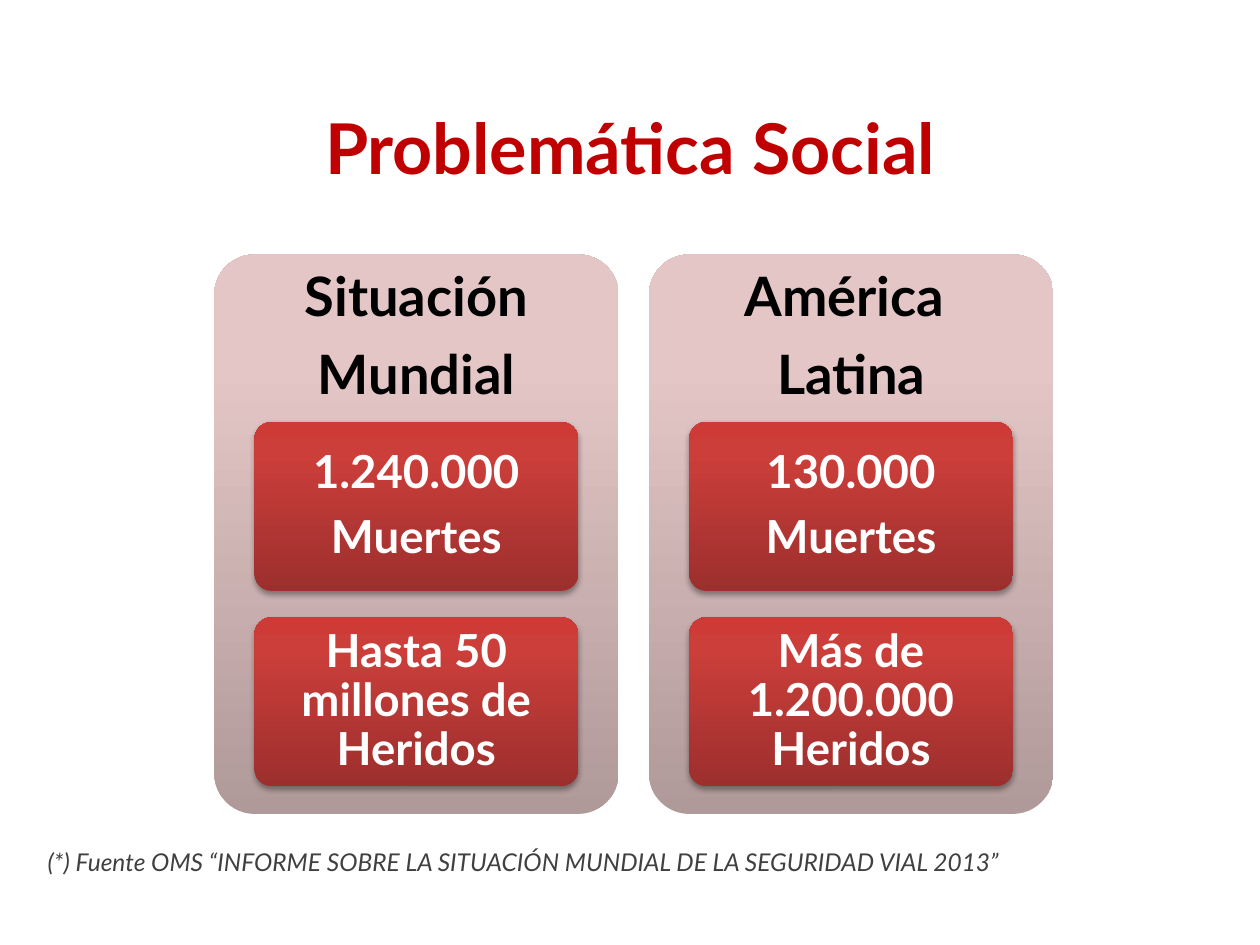
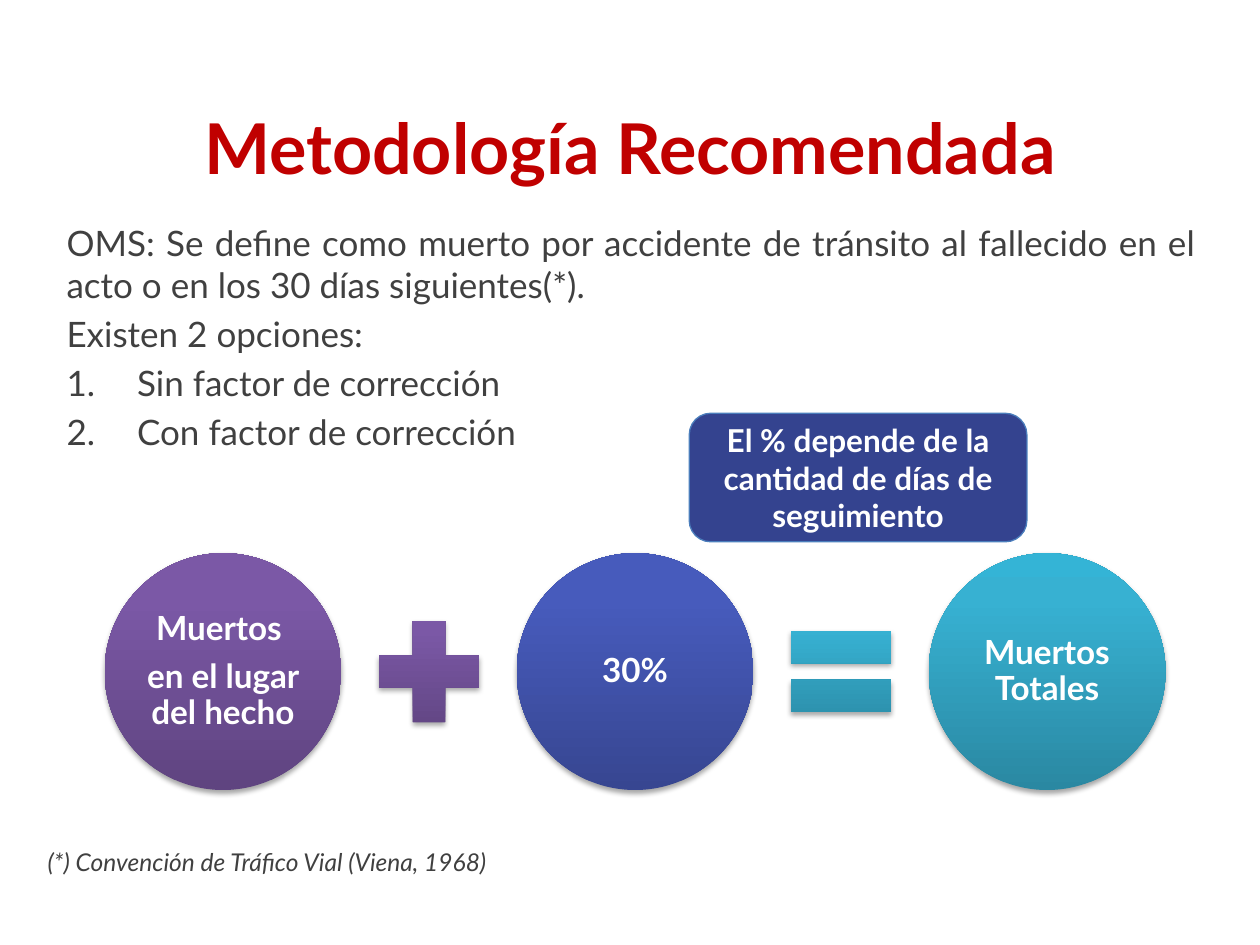
from copy import deepcopy

from lxml import etree
from pptx import Presentation
from pptx.dml.color import RGBColor
from pptx.enum.shapes import MSO_SHAPE
from pptx.enum.text import MSO_ANCHOR, PP_ALIGN
from pptx.oxml.ns import qn
from pptx.util import Inches, Pt

ROUNDED = MSO_SHAPE.ROUNDED_RECTANGLE
OVAL = MSO_SHAPE.OVAL
PLUS = MSO_SHAPE.MATH_PLUS
EQUAL = MSO_SHAPE.MATH_EQUAL
MIDDLE = MSO_ANCHOR.MIDDLE
TOP = MSO_ANCHOR.TOP
CENTER = PP_ALIGN.CENTER
LEFT = PP_ALIGN.LEFT
JUSTIFY = PP_ALIGN.JUSTIFY

FONT = "Lato"
TITLE_RED = RGBColor(0xC0, 0x00, 0x00)
GRAY = RGBColor(0x40, 0x40, 0x40)
BLACK = RGBColor(0x00, 0x00, 0x00)
WHITE = RGBColor(0xFF, 0xFF, 0xFF)
CALLOUT_FILL = RGBColor(0x34, 0x43, 0x8F)
CALLOUT_LINE = RGBColor(0x4B, 0x7E, 0xBC)

STOP_POSITIONS = (0, 0.8, 1)
PINK = (RGBColor(0xB0, 0x99, 0x99), RGBColor(0xE4, 0xC6, 0xC6), RGBColor(0xE6, 0xC6, 0xC6))
RED = (RGBColor(0x9C, 0x2F, 0x2D), RGBColor(0xCB, 0x3E, 0x3A), RGBColor(0xCE, 0x3B, 0x37))
PURPLE = (RGBColor(0x5F, 0x44, 0x80), RGBColor(0x7B, 0x58, 0xA6), RGBColor(0x7C, 0x57, 0xA8))
BLUE = (RGBColor(0x37, 0x46, 0x91), RGBColor(0x47, 0x5B, 0xBC), RGBColor(0x45, 0x5A, 0xBF))
TEAL = (RGBColor(0x2A, 0x88, 0xA2), RGBColor(0x37, 0xB1, 0xD2), RGBColor(0x34, 0xB4, 0xD6))

TITLE_FONT = {"size": Pt(40), "bold": True}
BODY_FONT = {"size": Pt(20)}
SOURCE_FONT = {"size": Pt(14), "italic": True}
CALLOUT_FONT = {"size": Pt(18), "bold": True}

PROBLEM_TITLE = "Problemática Social"
REGIONS = [
    (["Situación", "Mundial"],
     [["1.240.000", "Muertes"], ["Hasta 50 millones de Heridos"]]),
    (["América ", "Latina"],
     [["130.000", "Muertes"], ["Más de 1.200.000 Heridos"]]),
]
PROBLEM_SOURCE = "(*) Fuente OMS “INFORME SOBRE LA SITUACIÓN MUNDIAL DE LA SEGURIDAD VIAL 2013”"

METHOD_TITLE = "Metodología Recomendada"
DEFINITION = [
    "OMS: Se define como muerto por accidente de tránsito al fallecido en el acto "
    "o en los 30 días siguientes(*).",
    "Existen 2 opciones:",
]
OPTIONS = ["Sin factor de corrección", "Con factor de corrección"]
CALLOUT = "El % depende de la cantidad de días de seguimiento"
TERMS = [
    (["Muertos ", "en el lugar del hecho"], PURPLE),
    (["30%"], BLUE),
    (["Muertos Totales"], TEAL),
]
OPERATORS = [(PLUS, PURPLE), (EQUAL, TEAL)]
METHOD_SOURCE = "(*) Convención de Tráfico Vial (Viena, 1968)"

PANEL_LEFT, PANEL_TOP, PANEL_WIDTH, PANEL_HEIGHT, PANEL_STEP = 1.7, 2.02, 3.21, 4.44, 3.45
CARD_INDENT, CARD_TOP, CARD_WIDTH, CARD_HEIGHT, CARD_STEP = 0.32, 3.35, 2.57, 1.34, 1.55
TERM_LEFT, TERM_TOP, TERM_SIZE, TERM_STEP = 0.83, 4.39, 1.88, 3.27
OPERATOR_SIZE = 1.09


def set_values(target, values):
    """Set each named attribute on the target."""
    for name, value in values.items():
        setattr(target, name, value)


def write(shape, lines, font, color, alignment, anchor=TOP, spacing=None, margins=None):
    """Write one formatted paragraph per line and return the paragraphs."""
    frame = shape.text_frame
    set_values(frame, {"word_wrap": True, "vertical_anchor": anchor})
    if margins:
        names = ("margin_left", "margin_top", "margin_right", "margin_bottom")
        set_values(frame, {name: Inches(size) for name, size in zip(names, margins)})
    frame.text = "\n".join(lines)
    for paragraph in frame.paragraphs:
        set_values(paragraph, {"alignment": alignment, **(spacing or {})})
        for run in paragraph.runs:
            set_values(run.font, {"name": FONT, **font})
            run.font.color.rgb = color
    return frame.paragraphs


def add_shape(slide, kind, left, top, width, height):
    """Add a preset shape without the theme shadow."""
    shape = slide.shapes.add_shape(
        kind, Inches(left), Inches(top), Inches(width), Inches(height))
    shape.shadow.inherit = False
    return shape


def add_text_box(slide, left, top, width, height):
    """Add an empty text box."""
    return slide.shapes.add_textbox(Inches(left), Inches(top), Inches(width), Inches(height))


def add_gradient_shape(slide, kind, box, colors, shadow=True):
    """Add a shape with a vertical gradient and, by choice, a soft shadow."""
    shape = add_shape(slide, kind, *box)
    shape.line.fill.background()
    shape.fill.gradient()
    shape.fill.gradient_angle = 90
    properties = shape.element.spPr
    stop_list = properties.find(".//" + qn("a:gsLst"))
    stop_list.append(deepcopy(stop_list[0]))
    for stop, position, color in zip(shape.fill.gradient_stops, STOP_POSITIONS, colors):
        stop.position = position
        stop.color.rgb = color
    if shadow:
        outer = etree.SubElement(
            properties.find(qn("a:effectLst")), qn("a:outerShdw"),
            blurRad=str(Pt(3.1)), dist=str(Pt(1.8)), dir="5400000", rotWithShape="0")
        color = etree.SubElement(outer, qn("a:srgbClr"), val="000000")
        etree.SubElement(color, qn("a:alpha"), val="35000")
    return shape


def write_label(shape, lines, size, color, margins):
    """Write a bold centred label with tight lines."""
    spacing = {"line_spacing": 0.9, "space_after": Pt(round(size * 0.35))}
    write(shape, lines, {"size": Pt(size), "bold": True}, color, CENTER, MIDDLE,
          spacing, margins)


def add_slide(presentation, title, source):
    """Add a slide with its title and source note."""
    slide = presentation.slides.add_slide(presentation.slide_layouts[5])
    placeholder = slide.shapes.title
    set_values(placeholder, {"left": 0, "top": Inches(0.84),
                             "width": Inches(10), "height": Inches(0.64)})
    write(placeholder, [title], TITLE_FONT, TITLE_RED, CENTER, MIDDLE)
    note = add_text_box(slide, 0.28, 6.67, 9.72, 0.36)
    write(note, [source], SOURCE_FONT, GRAY, LEFT)
    return slide


def build_problem(presentation):
    """Build the slide with a panel of figures for each region."""
    slide = add_slide(presentation, PROBLEM_TITLE, PROBLEM_SOURCE)
    for column, (region, cards) in enumerate(REGIONS):
        left = PANEL_LEFT + column * PANEL_STEP
        panel = add_gradient_shape(
            slide, ROUNDED, (left, PANEL_TOP, PANEL_WIDTH, PANEL_HEIGHT), PINK, False)
        panel.adjustments[0] = 0.1
        write_label(panel, region, 31, BLACK, (0.04, 0.04, 0.04, 3.15))
        for row, lines in enumerate(cards):
            box = (left + CARD_INDENT, CARD_TOP + row * CARD_STEP, CARD_WIDTH, CARD_HEIGHT)
            card = add_gradient_shape(slide, ROUNDED, box, RED)
            card.adjustments[0] = 0.1
            write_label(card, lines, 26, WHITE, (0.07, 0.05, 0.07, 0.05))


def build_method(presentation):
    """Build the slide with the definition and the sum of terms."""
    slide = add_slide(presentation, METHOD_TITLE, METHOD_SOURCE)
    body = add_text_box(slide, 0.43, 1.71, 9.16, 2.2)
    paragraphs = write(body, DEFINITION + OPTIONS, BODY_FONT, GRAY, JUSTIFY)
    for paragraph in paragraphs[1:]:
        paragraph.space_before = Pt(4)
    for paragraph in paragraphs[len(DEFINITION):]:
        properties = paragraph._p.get_or_add_pPr()
        properties.set("marL", str(Inches(0.56)))
        properties.set("indent", str(-Inches(0.56)))
        etree.SubElement(properties, qn("a:buFont"), typeface="+mj-lt")
        etree.SubElement(properties, qn("a:buAutoNum"), type="arabicPeriod")

    for index, (lines, colors) in enumerate(TERMS):
        box = (TERM_LEFT + index * TERM_STEP, TERM_TOP, TERM_SIZE, TERM_SIZE)
        term = add_gradient_shape(slide, OVAL, box, colors)
        write_label(term, lines, 19, WHITE, (0.03,) * 4)
    gap = (TERM_STEP - TERM_SIZE - OPERATOR_SIZE) / 2
    operator_top = TERM_TOP + (TERM_SIZE - OPERATOR_SIZE) / 2
    for index, (kind, colors) in enumerate(OPERATORS):
        left = TERM_LEFT + index * TERM_STEP + TERM_SIZE + gap
        add_gradient_shape(
            slide, kind, (left, operator_top, OPERATOR_SIZE, OPERATOR_SIZE), colors)

    callout = add_shape(slide, ROUNDED, 5.47, 3.28, 2.68, 1.02)
    callout.fill.solid()
    callout.fill.fore_color.rgb = CALLOUT_FILL
    callout.line.color.rgb = CALLOUT_LINE
    callout.line.width = Pt(0.75)
    write(callout, [CALLOUT], CALLOUT_FONT, WHITE, CENTER, MIDDLE)


def main():
    """Build and save the presentation."""
    presentation = Presentation()
    presentation.slide_width = Inches(10)
    presentation.slide_height = Inches(7.5)
    build_problem(presentation)
    build_method(presentation)
    presentation.save("out.pptx")


if __name__ == "__main__":
    main()
